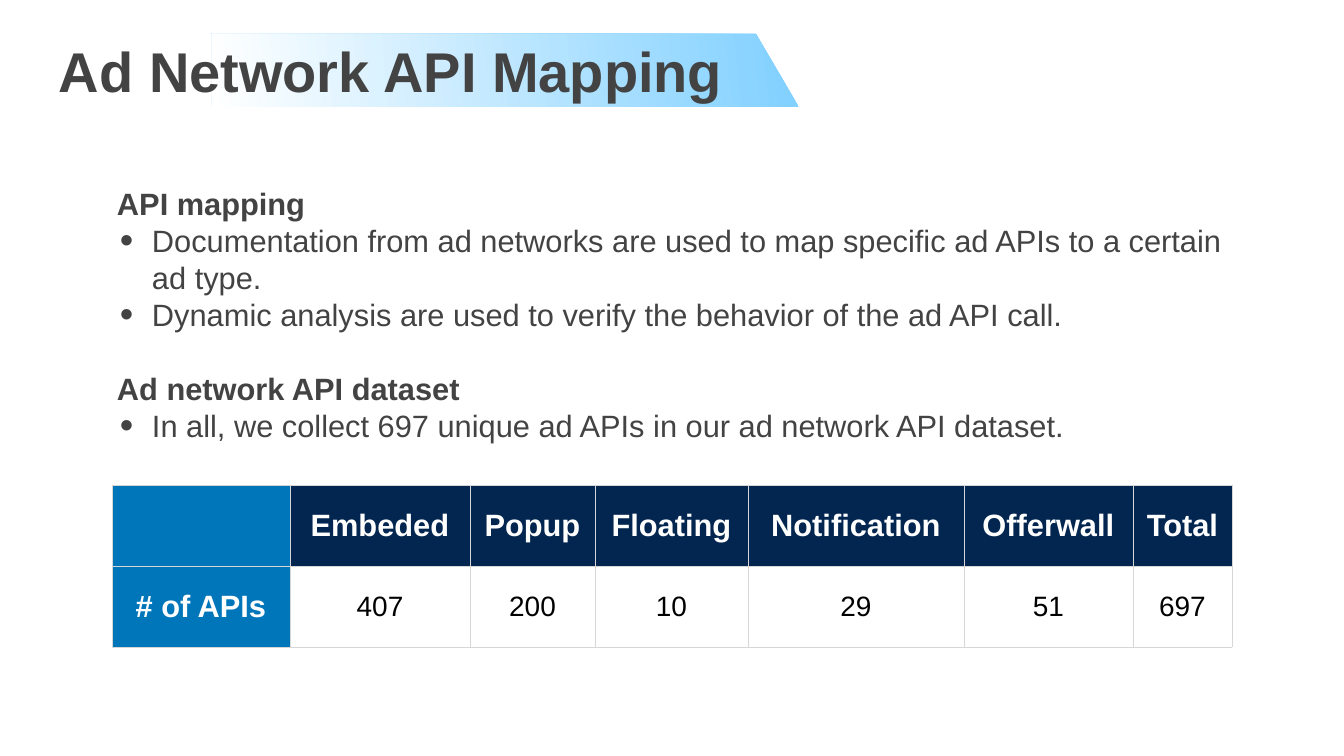
"""Build the Ad Network API Mapping slide."""
from lxml.etree import SubElement as Sub
from pptx import Presentation
from pptx.dml.color import RGBColor as Rgb
from pptx.enum.text import MSO_ANCHOR as Anchor, PP_ALIGN as Align
from pptx.oxml.ns import qn
from pptx.util import Emu, Pt

SIZE = (1344, 756)
SCALE = 914400 / 50.4
PAD = 3
HUES = {"text": "434343", "sky": "80D0FF", "white": "FFFFFF", "black": "000000",
        "navy": "032650", "blue": "0076BA", "rule": "D6D6D6"}

TITLE = "Ad Network API Mapping"
BANNER = [(212, 34), (756, 34), (799, 107), (212, 107)]
PARTS = [
    ("API mapping", [
        "Documentation from ad networks are used to map specific ad APIs to a certain ad type.",
        "Dynamic analysis are used to verify the behavior of the ad API call."]),
    ("Ad network API dataset", [
        "In all, we collect 697 unique ad APIs in our ad network API dataset."]),
]
ROWS = [
    ["", "Embeded", "Popup", "Floating", "Notification", "Offerwall", "Total"],
    ["# of APIs", "407", "200", "10", "29", "51", "697"],
]
COLS = [178, 180, 125, 153, 216, 169, 99]
ROW, LINE = 81, 37


def px(n):
    return Emu(round(n * SCALE))


def hue(name):
    return Rgb.from_string(HUES[name])


def put(para, text, size, color, bold):
    run = para.add_run()
    run.text = text
    font = run.font
    font.name, font.size, font.bold = "Arial", Pt(size), bold
    font.color.rgb = hue(color)


def add_box(slide, x, y, w, h):
    frame = slide.shapes.add_textbox(px(x), px(y), px(w), px(h)).text_frame
    frame.word_wrap = True
    pad(frame)
    return frame


def pad(item):
    item.margin_left = item.margin_right = px(PAD)
    item.margin_top = item.margin_bottom = px(PAD)


def indent(para, left, hang, mark=None):
    props = para._p.get_or_add_pPr()
    props.set("marL", str(px(left)))
    props.set("indent", str(px(-hang)))
    if mark:
        Sub(props, qn("a:buSzPct"), val="125000")
        Sub(props, qn("a:buFont"), typeface="Arial")
        Sub(props, qn("a:buChar"), char=mark)


def add_banner(slide):
    form = slide.shapes.build_freeform(*BANNER[0], scale=SCALE)
    form.add_line_segments(BANNER[1:], close=True)
    shape = form.convert_to_shape()
    shape.shadow.inherit = False
    shape.line.fill.background()
    shape.fill.gradient()
    shape.fill.gradient_angle = 186
    for stop, name, spot in zip(shape.fill.gradient_stops, ("sky", "white"), (0, 1)):
        stop.color.rgb = hue(name)
        stop.position = spot


def add_title(slide):
    frame = add_box(slide, 56, 34, 934, 72)
    frame.vertical_anchor = Anchor.MIDDLE
    put(frame.paragraphs[0], TITLE, 80, "text", True)


def add_body(slide):
    frame = add_box(slide, 82, 182, 1180, 264)
    lines = [(text, head) for title, points in PARTS
             for text, head in [(title, True)] + [(p, False) for p in points]]
    for i, (text, head) in enumerate(lines):
        para = frame.add_paragraph() if i else frame.paragraphs[0]
        if head:
            indent(para, 32, 0)
        else:
            indent(para, 67, 32, "•")
        para.line_spacing = px(LINE)
        if head and i:
            para.space_before = px(LINE)
        put(para, text, 44, "text", head)


def add_rules(cell):
    props = cell._tc.get_or_add_tcPr()
    for side in "LRTB":
        line = Sub(props, qn("a:ln" + side), w=str(Pt(1)))
        Sub(Sub(line, qn("a:solidFill")), qn("a:srgbClr"), val=HUES["rule"])


def add_grid(slide):
    table = slide.shapes.add_table(len(ROWS), len(COLS), px(112), px(485),
                                   px(sum(COLS)), px(ROW * len(ROWS))).table
    for col, wide in zip(table.columns, COLS):
        col.width = px(wide)
    for r, row in enumerate(ROWS):
        table.rows[r].height = px(ROW)
        for c, text in enumerate(row):
            cell = table.cell(r, c)
            add_rules(cell)
            pad(cell)
            cell.vertical_anchor = Anchor.MIDDLE
            head = r == 0 or c == 0
            if head:
                cell.fill.solid()
                cell.fill.fore_color.rgb = hue("navy" if c else "blue")
            else:
                cell.fill.background()
            para = cell.text_frame.paragraphs[0]
            para.alignment = Align.CENTER
            if text:
                put(para, text, 44 if head else 40, "white" if head else "black", head)


def main():
    deck = Presentation()
    deck.slide_width, deck.slide_height = map(px, SIZE)
    slide = deck.slides.add_slide(deck.slide_layouts[6])
    add_banner(slide)
    add_title(slide)
    add_body(slide)
    add_grid(slide)
    deck.save("out.pptx")


if __name__ == "__main__":
    main()
